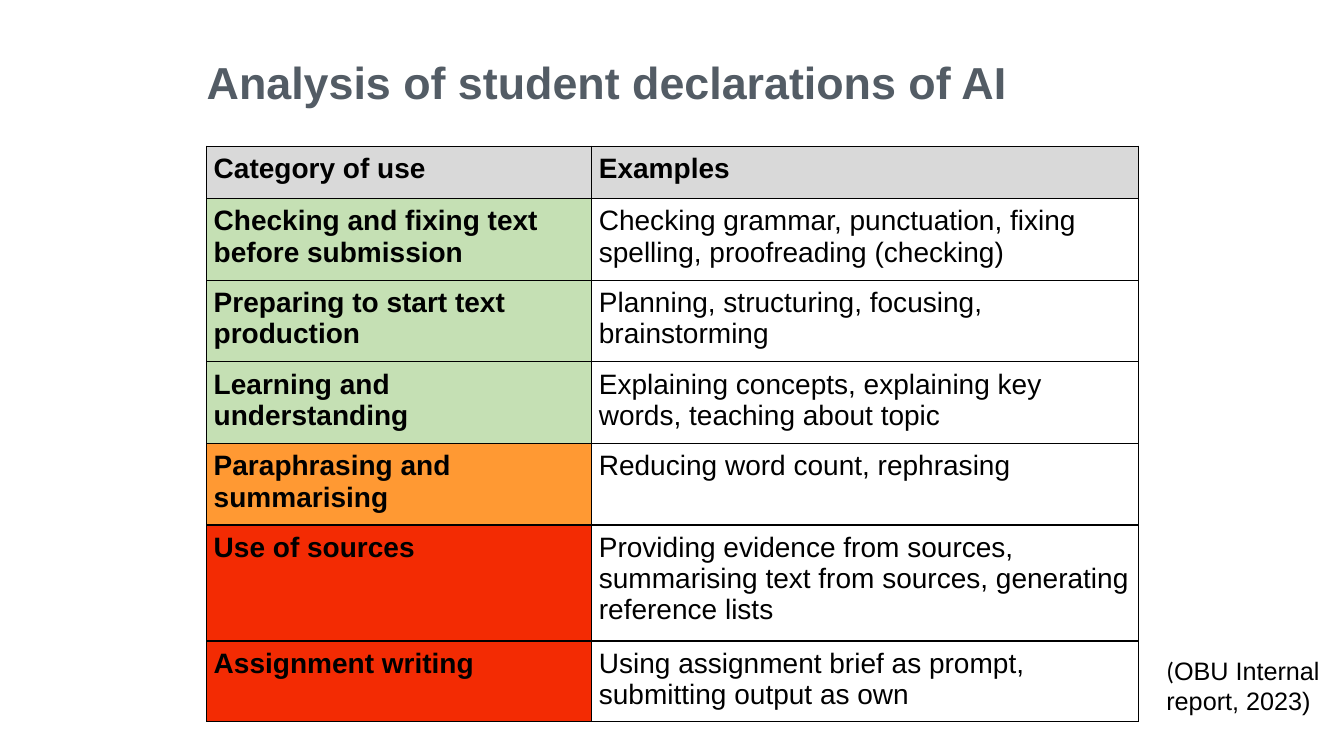
from lxml import etree
from pptx import Presentation
from pptx.dml.color import RGBColor
from pptx.enum.text import MSO_ANCHOR, MSO_AUTO_SIZE, PP_ALIGN
from pptx.oxml.ns import qn
from pptx.util import Inches, Pt

TOP, LEFT = MSO_ANCHOR.TOP, PP_ALIGN.LEFT
NO_AUTOFIT, GROW = MSO_AUTO_SIZE.NONE, MSO_AUTO_SIZE.SHAPE_TO_FIT_TEXT

BLACK = RGBColor(0x00, 0x00, 0x00)
SLATE = RGBColor(0x53, 0x5C, 0x65)
GREY = RGBColor(0xD9, 0xD9, 0xD9)
GREEN = RGBColor(0xC5, 0xE0, 0xB4)
ORANGE = RGBColor(0xFF, 0x99, 0x33)
RED = RGBColor(0xF3, 0x2B, 0x03)

COLUMN_WIDTHS = (3.82, 5.42)
CELL_MARGIN = 0.07
BORDER_WIDTH = Pt(1)

# Row height, category, examples, category fill
ROWS = (
    (0.52, "Category of use", "Examples", GREY),
    (0.81, "Checking and fixing text before submission",
     "Checking grammar, punctuation, fixing spelling, proofreading (checking)", GREEN),
    (0.81, "Preparing to start text production",
     "Planning, structuring, focusing, brainstorming", GREEN),
    (0.81, "Learning and understanding",
     "Explaining concepts, explaining key words, teaching about topic", GREEN),
    (0.81, "Paraphrasing and summarising", "Reducing word count, rephrasing", ORANGE),
    (1.15, "Use of sources",
     "Providing evidence from sources, summarising text from sources, "
     "generating reference lists", RED),
    (0.80, "Assignment writing",
     "Using assignment brief as prompt, submitting output as own", RED),
)


def set_attributes(target, values):
    for name, value in values.items():
        setattr(target, name, value)


def add_run(paragraph, text, size, color=BLACK, bold=False, font="Arial"):
    run = paragraph.add_run()
    run.text = text
    set_attributes(run.font, {"name": font, "size": Pt(size), "bold": bold})
    run.font.color.rgb = color


def set_margins(target, margin):
    for side in ("left", "top", "right", "bottom"):
        setattr(target, f"margin_{side}", Inches(margin))


def add_borders(cell):
    properties = cell._tc.get_or_add_tcPr()
    for position, edge in enumerate(("a:lnL", "a:lnR", "a:lnT", "a:lnB")):
        line = etree.Element(qn(edge), w=str(BORDER_WIDTH))
        fill = etree.SubElement(line, qn("a:solidFill"))
        etree.SubElement(fill, qn("a:srgbClr"), val=str(BLACK))
        properties.insert(position, line)


def format_title(slide, left, top, width, height):
    title = slide.shapes.title
    set_attributes(title, {"left": Inches(left), "top": Inches(top),
                           "width": Inches(width), "height": Inches(height)})
    frame = title.text_frame
    set_attributes(frame, {"word_wrap": True, "vertical_anchor": TOP,
                           "auto_size": NO_AUTOFIT})
    set_margins(frame, 0)
    paragraph = frame.paragraphs[0]
    set_attributes(paragraph, {"alignment": LEFT, "line_spacing": 0.9})
    add_run(paragraph, "Analysis of student declarations of AI", 32, SLATE, True)


def fill_cell(cell, text, bold, color):
    set_margins(cell, CELL_MARGIN)
    cell.vertical_anchor = TOP
    add_run(cell.text_frame.paragraphs[0], text, 20, bold=bold)
    if color is None:
        cell.fill.background()
    else:
        cell.fill.solid()
        cell.fill.fore_color.rgb = color
    add_borders(cell)


def add_category_table(slide, left, top):
    height = sum(row[0] for row in ROWS)
    table = slide.shapes.add_table(
        len(ROWS), len(COLUMN_WIDTHS), Inches(left), Inches(top),
        Inches(sum(COLUMN_WIDTHS)), Inches(height)).table
    table.horz_banding = False
    for column, width in zip(table.columns, COLUMN_WIDTHS):
        column.width = Inches(width)
    for index, (row_height, category, examples, color) in enumerate(ROWS):
        is_header = index == 0
        table.rows[index].height = Inches(row_height)
        fill_cell(table.cell(index, 0), category, True, color)
        fill_cell(table.cell(index, 1), examples, is_header, color if is_header else None)


def add_source_note(slide, left, top, width, height):
    note = slide.shapes.add_textbox(Inches(left), Inches(top), Inches(width), Inches(height))
    set_attributes(note.text_frame, {"word_wrap": True, "auto_size": GROW})
    paragraph = note.text_frame.paragraphs[0]
    add_run(paragraph, "(", 18, font="Calibri")
    add_run(paragraph, "OBU Internal report, 2023)", 18)


def main():
    presentation = Presentation()
    presentation.slide_width = Inches(13.33)
    presentation.slide_height = Inches(7.5)
    title_only = presentation.slide_layouts.get_by_name("Title Only")
    slide = presentation.slides.add_slide(title_only)
    format_title(slide, 2.05, 0.6, 11.17, 0.72)
    add_category_table(slide, 2.05, 1.45)
    add_source_note(slide, 11.47, 6.45, 1.74, 0.71)
    presentation.save("out.pptx")


if __name__ == "__main__":
    main()
